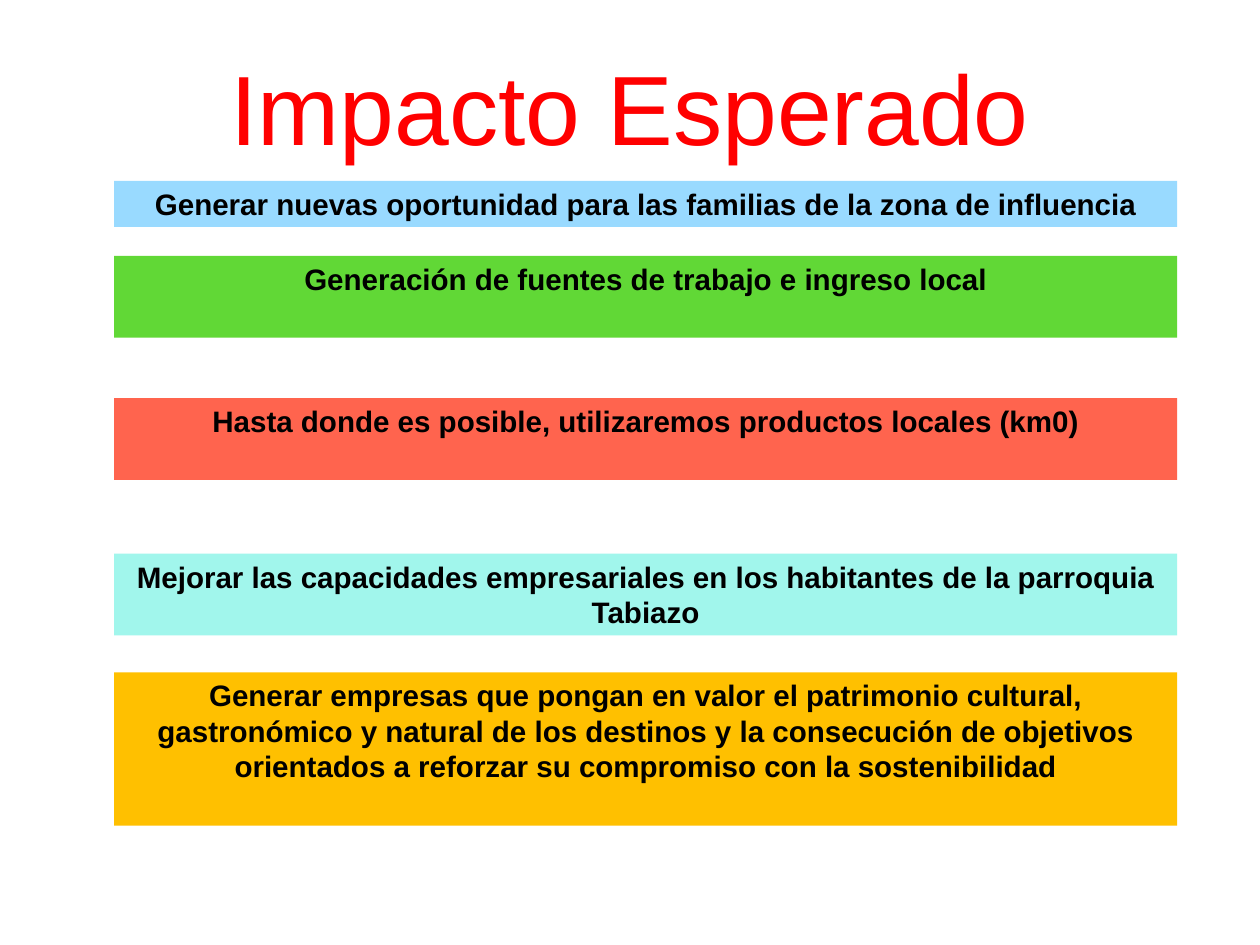
from pptx import Presentation
from pptx.dml.color import RGBColor
from pptx.enum.shapes import MSO_SHAPE
from pptx.enum.text import MSO_ANCHOR, PP_ALIGN
from pptx.util import Pt

RECTANGLE = MSO_SHAPE.RECTANGLE
TOP, MIDDLE = MSO_ANCHOR.TOP, MSO_ANCHOR.MIDDLE
CENTER = PP_ALIGN.CENTER


def color(value):
    return RGBColor.from_string(value)


def write_text(shape, text, size, fill="000000", bold=False, anchor=TOP, margin=4):
    frame = shape.text_frame
    frame.word_wrap = True
    frame.vertical_anchor = anchor
    frame.margin_left = frame.margin_right = Pt(margin)
    frame.margin_top = frame.margin_bottom = Pt(margin)
    paragraph = frame.paragraphs[0]
    paragraph.alignment = CENTER
    run = paragraph.add_run()
    run.text = text
    run.font.name = "Arial"
    run.font.size = Pt(size)
    run.font.bold = bold
    run.font.color.rgb = color(fill)


presentation = Presentation()
presentation.slide_width = Pt(1024)
presentation.slide_height = Pt(768)
slide = presentation.slides.add_slide(presentation.slide_layouts[5])

# Title
title = slide.shapes.title
title.left, title.top = Pt(75), Pt(20)
title.width, title.height = Pt(874), Pt(132.5)
write_text(title, "Impacto Esperado", size=80, fill="FF0000", anchor=MIDDLE)

# Impact bands: top, height, fill, text
impacts = [
    (147, 37.5, "99DAFF",
     "Generar nuevas oportunidad para las familias de la zona de influencia"),
    (208, 66.5, "61D836",
     "Generación de fuentes de trabajo e ingreso local"),
    (323.5, 66.5, "FF644E",
     "Hasta donde es posible, utilizaremos productos locales (km0)"),
    (450, 66.5, "A1F6EC",
     "Mejorar las capacidades empresariales en los habitantes de la parroquia Tabiazo"),
    (546.5, 124.5, "FFC000",
     "Generar empresas que pongan en valor el patrimonio cultural, gastronómico y "
     "natural de los destinos y la consecución de objetivos orientados a reforzar "
     "su compromiso con la sostenibilidad"),
]
for top, height, band_fill, text in impacts:
    band = slide.shapes.add_shape(RECTANGLE, Pt(92.7), Pt(top), Pt(864), Pt(height))
    band.shadow.inherit = False
    band.fill.solid()
    band.fill.fore_color.rgb = color(band_fill)
    band.line.fill.background()
    write_text(band, text, size=24, bold=True)

presentation.save("out.pptx")
